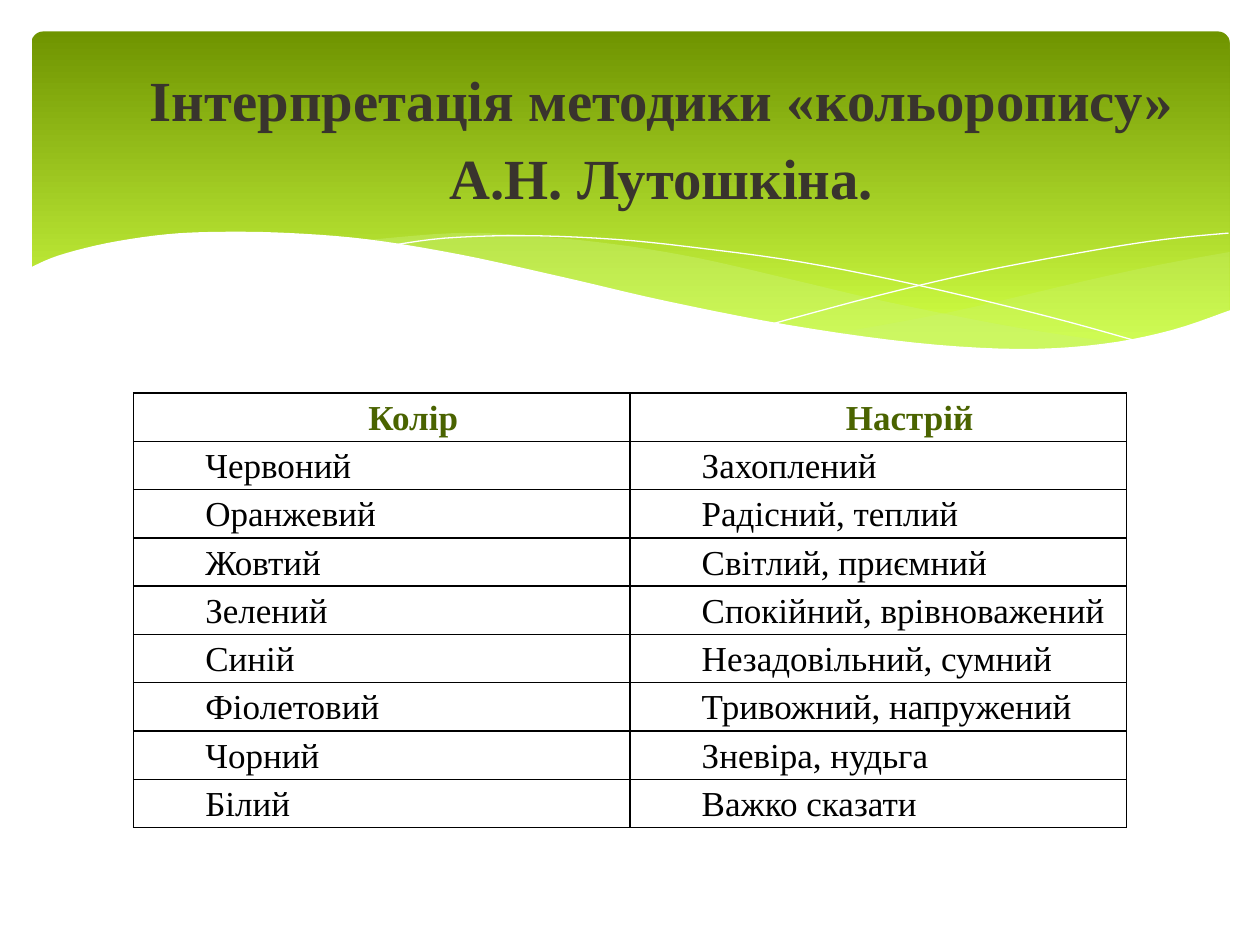
"""Build a slide with a wavy green banner, a title and a colour-to-mood table."""
import lxml.etree
import pptx
import pptx.dml.color
import pptx.enum.text
import pptx.oxml.ns
import pptx.util

Inches, Pt = pptx.util.Inches, pptx.util.Pt
Align, Anchor = pptx.enum.text.PP_ALIGN, pptx.enum.text.MSO_ANCHOR
qn = pptx.oxml.ns.qn

WIDTH, HEIGHT = 10, 7.5
FONT = "Times New Roman"
TITLE = "Інтерпретація методики «кольоропису» А.Н. Лутошкіна."
ROWS = [
    ("Колір", "Настрій"),
    ("Червоний", "Захоплений"),
    ("Оранжевий", "Радісний, теплий"),
    ("Жовтий", "Світлий, приємний"),
    ("Зелений", "Спокійний, врівноважений"),
    ("Синій", "Незадовільний, сумний"),
    ("Фіолетовий", "Тривожний, напружений"),
    ("Чорний", "Зневіра, нудьга"),
    ("Білий", "Важко сказати"),
]
WAVES = [
    {"fill": "CAF278", "alpha": 29, "curves": [
        [(9.76, 2), (9.21, 2.1), (8.61, 2.23), (7.53, 2.48), (6.61, 2.65)],
        [(6.61, 2.65), (7.19, 2.72), (7.92, 2.77), (8.54, 2.76), (9.05, 2.69),
         (9.42, 2.59), (9.76, 2.47)]]},
    {"fill": "CAF278", "alpha": 40, "curves": [
        [(8.93, 2.73), (8.07, 2.6), (7.06, 2.4), (6.29, 2.22), (5.55, 2.05),
         (4.89, 1.94), (4.2, 1.87), (3.61, 1.85), (2.86, 1.91)],
        [(2.86, 1.91), (3.62, 2.03), (4.49, 2.22), (5.3, 2.4), (6.18, 2.58),
         (6.95, 2.7), (7.61, 2.77), (8.28, 2.78), (8.93, 2.73)]]},
    {"line": "FFFFFF", "curves": [
        [(3.09, 1.95), (3.53, 1.89), (4.16, 1.87), (4.89, 1.9), (5.56, 1.97),
         (6.36, 2.08), (7.27, 2.26), (8.31, 2.51), (9.07, 2.72)]]},
    {"line": "FFFFFF", "curves": [
        [(6.13, 2.57), (6.95, 2.35), (7.76, 2.16), (8.66, 1.99), (9.24, 1.9),
         (9.75, 1.85)]]},
    {"fill": "FFFFFF", "curves": [
        [(9.77, 2.46), (9.3, 2.62), (8.75, 2.73), (8.09, 2.77), (7.26, 2.72),
         (6.26, 2.58), (5.29, 2.39), (4.47, 2.2), (3.65, 2.02), (2.92, 1.9),
         (2.3, 1.85), (1.77, 1.84), (1.32, 1.86), (0.85, 1.93), (0.46, 2.03),
         (0.23, 2.13)],
        [(0.23, 3.29), (9.77, 3.29)]]},
]


def rgb(value):
    return pptx.dml.color.RGBColor.from_string(value)


def smooth(points, steps=5):
    if len(points) < 3:
        return points
    padded = [points[0], *points, points[-1]]
    result = [points[0]]
    for a, b, c, d in zip(padded, padded[1:], padded[2:], padded[3:]):
        for step in range(1, steps + 1):
            t = step / steps
            result.append(tuple(
                (2 * q + (r - p) * t + (2 * p - 5 * q + 4 * r - s) * t ** 2
                 + (3 * q - p - 3 * r + s) * t ** 3) / 2
                for p, q, r, s in zip(a, b, c, d)))
    return result


def add_wave(slide, wave):
    points = [(Inches(x), Inches(y)) for curve in wave["curves"] for x, y in smooth(curve)]
    builder = slide.shapes.build_freeform(*points[0])
    builder.add_line_segments(points[1:], close="fill" in wave)
    shape = builder.convert_to_shape()
    shape.shadow.inherit = False
    if "line" in wave:
        shape.fill.background()
        shape.line.color.rgb = rgb(wave["line"])
        shape.line.width = Pt(0)
        return
    shape.line.fill.background()
    shape.fill.solid()
    shape.fill.fore_color.rgb = rgb(wave["fill"])
    if "alpha" in wave:
        color = shape.element.spPr.find(f"{qn('a:solidFill')}/{qn('a:srgbClr')}")
        lxml.etree.SubElement(color, qn("a:alpha"), val=str(wave["alpha"] * 1000))


def add_banner(slide):
    margin = WIDTH * 0.025
    shape = slide.shapes.add_shape(
        pptx.enum.shapes.MSO_SHAPE.ROUNDED_RECTANGLE, Inches(margin), Inches(margin),
        Inches(9.51), Inches(HEIGHT * 0.36))
    shape.adjustments[0] = 0.034
    shape.shadow.inherit = False
    shape.line.fill.background()
    shape.fill.gradient()
    shape.fill.gradient_angle = 270
    stops = zip(shape.fill.gradient_stops, [(0, "6F9400"), (0.9, "D0FF44")])
    for stop, (position, color) in stops:
        stop.position = position
        stop.color.rgb = rgb(color)


def format_paragraph(paragraph, size, color, bold, alignment):
    paragraph.alignment = alignment
    paragraph.line_spacing = 1.15
    paragraph.space_before = Pt(0)
    properties = paragraph._p.get_or_add_pPr()
    properties.set("marL", str(Inches(0.5)))
    properties.set("indent", "0")
    for run in paragraph.runs:
        run.font.name = FONT
        run.font.size = Pt(size)
        run.font.bold = bold
        run.font.color.rgb = rgb(color)


def set_borders(cell):
    properties = cell._tc.get_or_add_tcPr()
    for index, side in enumerate(("a:lnL", "a:lnR", "a:lnT", "a:lnB")):
        line = lxml.etree.Element(qn(side), w=str(Pt(1)))
        fill = lxml.etree.SubElement(line, qn("a:solidFill"))
        lxml.etree.SubElement(fill, qn("a:srgbClr"), val="000000")
        properties.insert(index, line)


def add_mood_table(slide):
    column_width, row_height = Inches(3.94), Inches(3.45 / len(ROWS))
    table = slide.shapes.add_table(
        len(ROWS), len(ROWS[0]), Inches(1.06), Inches(3.12),
        column_width * len(ROWS[0]), row_height * len(ROWS)).table
    table.horz_banding = False
    for row_index, texts in enumerate(ROWS):
        header = row_index == 0
        for column_index, text in enumerate(texts):
            cell = table.cell(row_index, column_index)
            cell.fill.background()
            cell.margin_left = cell.margin_right = Inches(0.07)
            cell.margin_top = cell.margin_bottom = 0
            cell.text_frame.text = text
            format_paragraph(cell.text_frame.paragraphs[0], 20,
                             "4A6300" if header else "000000", header,
                             Align.CENTER if header else Align.LEFT)
            set_borders(cell)


def place_title(slide):
    title = slide.shapes.title
    title.left, title.top = Inches(WIDTH * 0.05), Inches(0.37)
    title.width, title.height = Inches(WIDTH * 0.9), Inches(1.37)
    frame = title.text_frame
    frame.text = TITLE
    frame.word_wrap = True
    frame.auto_size = pptx.enum.text.MSO_AUTO_SIZE.NONE
    frame.vertical_anchor = Anchor.MIDDLE
    format_paragraph(frame.paragraphs[0], 32.4, "39342D", True, Align.CENTER)
    title.element.getparent().append(title.element)


def main():
    presentation = pptx.Presentation()
    presentation.slide_width, presentation.slide_height = Inches(WIDTH), Inches(HEIGHT)
    slide = presentation.slides.add_slide(presentation.slide_layouts[5])
    add_banner(slide)
    for wave in WAVES:
        add_wave(slide, wave)
    add_mood_table(slide)
    place_title(slide)
    presentation.save("out.pptx")


if __name__ == "__main__":
    main()
